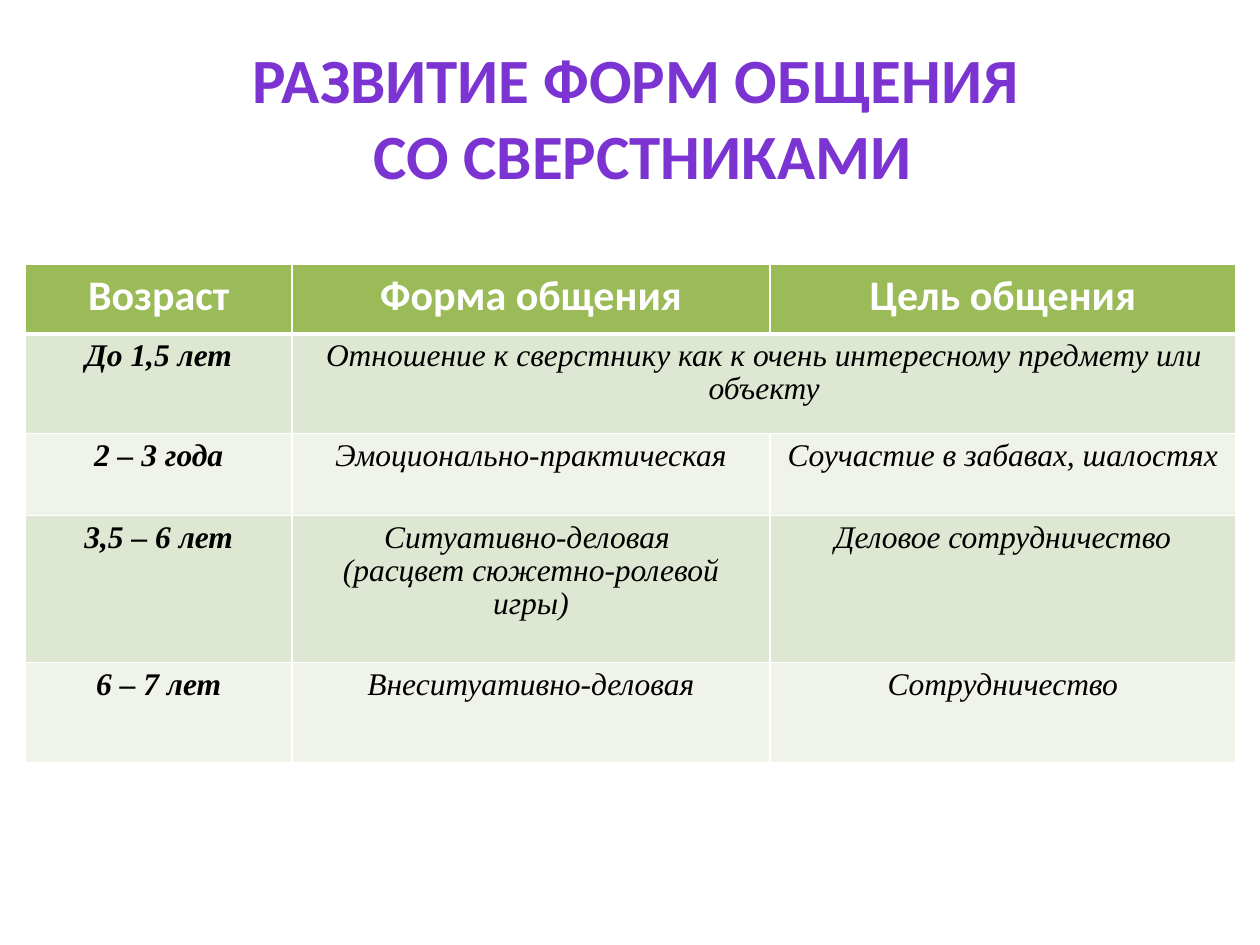
from dataclasses import dataclass

from lxml.etree import SubElement
from pptx import Presentation
from pptx.dml.color import RGBColor
from pptx.enum.text import MSO_ANCHOR, PP_ALIGN
from pptx.oxml.ns import qn
from pptx.util import Pt

WHITE = RGBColor(0xFF, 0xFF, 0xFF)
BLACK = RGBColor(0, 0, 0)
GREEN = RGBColor(0x9B, 0xBB, 0x59)
SAGE = RGBColor(0xDE, 0xE7, 0xD1)
PALE = RGBColor(0xEF, 0xF3, 0xEA)
VIOLET = RGBColor(0x7B, 0x34, 0xD2)

LEFT = 14.4
WIDTHS = [152.6, 272.9, 266.4]


@dataclass
class Row:
    height: float
    texts: list[str]


@dataclass
class Style:
    font: str
    size: float
    color: RGBColor
    bold: bool = False
    italic: bool = False
    space: float = 1.0


ROWS = [
    Row(39.6, ["Возраст", "Форма общения", "Цель общения"]),
    Row(56.9, ["До 1,5 лет", "Отношение к сверстнику как к очень интересному предмету или объекту"]),
    Row(46.8, ["2 – 3 года", "Эмоционально-практическая", "Соучастие в забавах, шалостях"]),
    Row(84.2, ["3,5 – 6 лет", "Ситуативно-деловая \n(расцвет сюжетно-ролевой игры)", "Деловое сотрудничество"]),
    Row(56.9, ["6 – 7 лет", "Внеситуативно-деловая", "Сотрудничество"]),
]

TITLE = Style("Calibri", 36, VIOLET, bold=True)
HEAD = Style("Calibri", 24, WHITE, bold=True)
AGE = Style("Times New Roman", 18, BLACK, bold=True, italic=True, space=0.95)
BODY = Style("Times New Roman", 18, BLACK, italic=True, space=0.95)


def write(frame, text: str, style: Style) -> None:
    frame.text = text
    for para in frame.paragraphs:
        para.alignment = PP_ALIGN.CENTER
        para.line_spacing = style.space
        for run in para.runs:
            font = run.font
            font.name, font.size = style.font, Pt(style.size)
            font.bold, font.italic = style.bold, style.italic
            font.color.rgb = style.color


def edge(cell, side: str, width: float) -> None:
    line = SubElement(cell._tc.get_or_add_tcPr(), qn(f"a:ln{side}"), w=str(Pt(width)))
    fill = SubElement(line, qn("a:solidFill"))
    SubElement(fill, qn("a:srgbClr"), val=str(WHITE))


def paint(cell, row: int) -> None:
    # The rule under the header is thicker than the rest
    tops = {1: 3}
    for side, width in (("L", 1), ("R", 1), ("T", tops.get(row, 1)), ("B", tops.get(row + 1, 1))):
        edge(cell, side, width)
    cell.fill.solid()
    cell.fill.fore_color.rgb = GREEN if row == 0 else SAGE if row % 2 else PALE


def draw_table(slide) -> None:
    high = sum(row.height for row in ROWS)
    grid = slide.shapes.add_table(
        len(ROWS), len(WIDTHS), Pt(LEFT), Pt(151.2), Pt(sum(WIDTHS)), Pt(high)
    ).table
    for col, width in zip(grid.columns, WIDTHS):
        col.width = Pt(width)
    for r, row in enumerate(ROWS):
        grid.rows[r].height = Pt(row.height)
        for c in range(len(WIDTHS)):
            paint(grid.cell(r, c), r)
        # A short row spans its last text to the right edge
        if len(row.texts) < len(WIDTHS):
            grid.cell(r, len(row.texts) - 1).merge(grid.cell(r, len(WIDTHS) - 1))
        for c, text in enumerate(row.texts):
            style = HEAD if r == 0 else BODY if c else AGE
            write(grid.cell(r, c).text_frame, text, style)


def main() -> None:
    deck = Presentation()
    deck.slide_width, deck.slide_height = Pt(720), Pt(540)
    slide = deck.slides.add_slide(deck.slide_layouts[5])

    # Title
    title = slide.shapes.title
    title.left, title.top, title.width, title.height = Pt(LEFT), Pt(21.6), Pt(705.6), Pt(90)
    title.text_frame.vertical_anchor = MSO_ANCHOR.MIDDLE
    write(title.text_frame, "РАЗВИТИЕ ФОРМ ОБЩЕНИЯ \vСО СВЕРСТНИКАМИ", TITLE)

    # Forms of communication by age
    draw_table(slide)
    deck.save("out.pptx")


if __name__ == "__main__":
    main()
